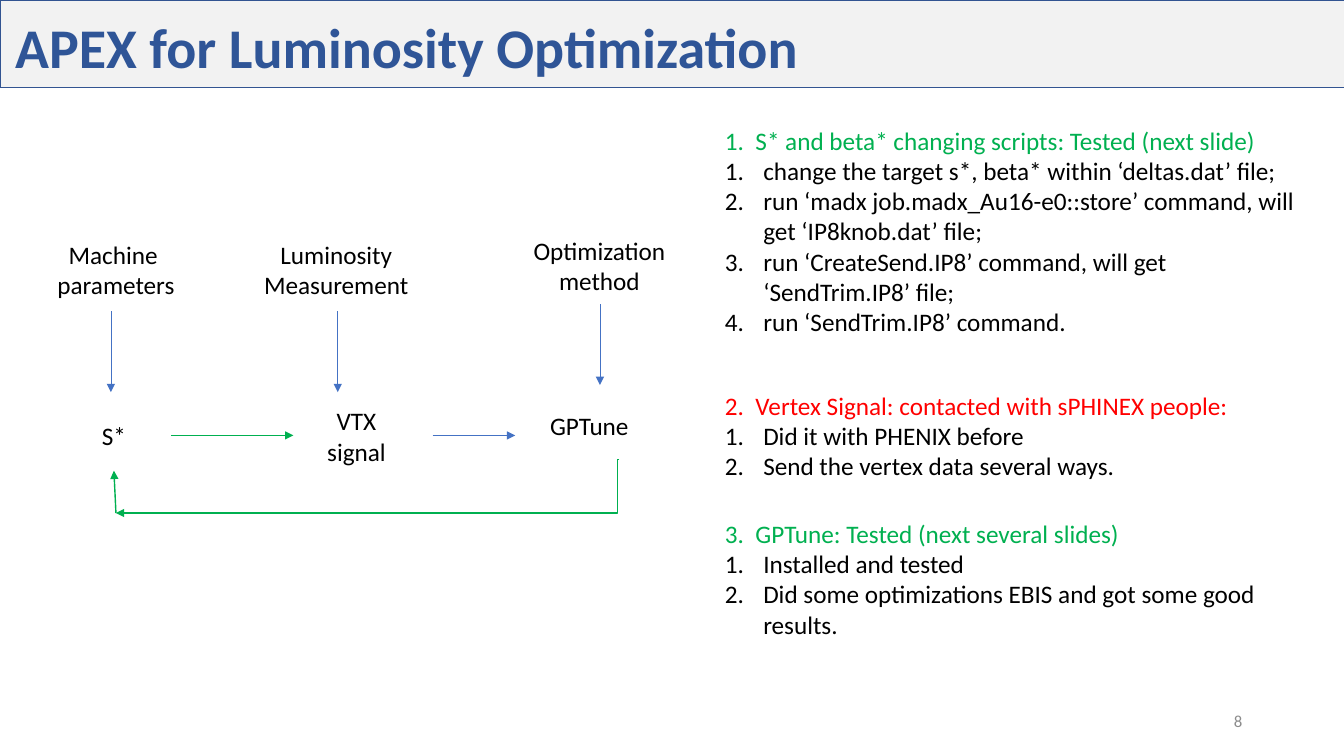
from dataclasses import dataclass

from pptx import Presentation
from pptx.dml.color import RGBColor
from pptx.enum import shapes, text
from pptx.oxml import ns, xmlchemy
from pptx.util import Inches, Pt

FONT = "Calibri"
BLACK, GREEN, RED, BLUE = "000000", "00B050", "FF0000", "4472C4"
NAVY, GRAY = "2F5597", "8C8C8C"
LEFT, MID, RIGHT = text.PP_ALIGN.LEFT, text.PP_ALIGN.CENTER, text.PP_ALIGN.RIGHT


@dataclass
class Label:
    words: str
    box: tuple
    wrap: bool = True
    size: int = 18
    color: str = BLACK
    align: text.PP_ALIGN = MID


@dataclass
class Arrow:
    start: tuple
    end: tuple
    color: str = BLUE
    width: float = 0.5
    bend: int = 0


@dataclass
class Topic:
    slot: int
    box: tuple
    head: str
    color: str
    steps: list


LABELS = [
    Label("8", (9.42, 6.95, 3, 0.4), size=12, color=GRAY, align=RIGHT),
    Label("Optimization method", (5.15, 2.28, 1.59, 0.71)),
    Label("VTX\nsignal", (2.74, 3.97, 1.59, 0.71)),
    Label("Machine \nparameters", (0.46, 2.32, 1.38, 0.71), wrap=False),
    Label("S*", (0.91, 4.12, 0.44, 0.4), wrap=False),
    Label("GPTune", (5.11, 4.02, 1.47, 0.4)),
    Label("Luminosity Measurement", (2.51, 2.32, 1.65, 0.71)),
]
ARROWS = [
    Arrow((1.7, 4.32), (2.91, 4.32), GREEN),
    Arrow((4.29, 4.32), (5.11, 4.32)),
    Arrow((6.14, 4.56), (1.15, 5.09), GREEN, 1, bend=300),
    Arrow((1.15, 5.09), (1.13, 4.67), GREEN, 1),
    Arrow((1.1, 3.09), (1.1, 3.89)),
    Arrow((5.95, 3.02), (5.95, 3.82)),
    Arrow((3.35, 3.09), (3.35, 3.89)),
]
TOPICS = [
    Topic(1, (7.09, 1.19, 5.87, 2.22),
          "1.  S* and beta* changing scripts: Tested (next slide)", GREEN,
          ["change the target s*, beta* within ‘deltas.dat’ file;",
           "run ‘madx job.madx_Au16-e0::store’ command, will get ‘IP8knob.dat’ file;",
           "run ‘CreateSend.IP8’ command, will get ‘SendTrim.IP8’ file;",
           "run ‘SendTrim.IP8’ command."]),
    Topic(2, (7.09, 3.82, 5.63, 1.01),
          "2.  Vertex Signal: contacted with sPHINEX people:", RED,
          ["Did it with PHENIX before", "Send the vertex data several ways."]),
    Topic(3, (7.09, 5.09, 5.55, 1.31),
          "3.  GPTune: Tested (next several slides)", GREEN,
          ["Installed and tested",
           "Did some optimizations EBIS and got some good results."]),
]


def paint(target, color: str) -> None:
    target.rgb = RGBColor.from_string(color)


def style(par, size: int, color: str, bold: bool = False, align=LEFT) -> None:
    par.alignment = align
    par.line_spacing = 1.0
    par.space_before = par.space_after = Pt(0)
    par.font.name, par.font.size, par.font.bold = FONT, Pt(size), bold
    paint(par.font.color, color)


def place(shape, box: tuple) -> None:
    shape.left, shape.top, shape.width, shape.height = map(Inches, box)


def add(parent, tag: str, **attrs: str):
    """Append one child element with the given attributes."""
    child = xmlchemy.OxmlElement(tag)
    for key, value in attrs.items():
        child.set(key, value)
    parent.append(child)
    return child


def mark(par, step: bool) -> None:
    """Number a step, or clear the bullet of a heading."""
    props = par._p.get_or_add_pPr()
    hang = Inches(0.38) if step else 0
    props.set("marL", str(hang))
    props.set("indent", str(-hang))
    if step:
        add(props, "a:buFont", typeface="+mj-lt")
        add(props, "a:buAutoNum", type="arabicPeriod")
    else:
        add(props, "a:buNone")


def draw_label(slide, label: Label) -> None:
    shape = slide.shapes.add_textbox(*map(Inches, label.box))
    frame = shape.text_frame
    frame.word_wrap = label.wrap
    frame.vertical_anchor = text.MSO_ANCHOR.MIDDLE
    frame.text = label.words
    for par in frame.paragraphs:
        style(par, label.size, label.color, align=label.align)


def draw_arrow(slide, arrow: Arrow) -> None:
    kinds = shapes.MSO_CONNECTOR
    kind = kinds.ELBOW if arrow.bend else kinds.STRAIGHT
    line = slide.shapes.add_connector(kind, *map(Inches, arrow.start + arrow.end))
    line.line.width = Pt(arrow.width)
    paint(line.line.color, arrow.color)
    props = line._element.spPr
    add(props.find(ns.qn("a:ln")), "a:tailEnd", type="triangle")
    add(props, "a:effectLst")
    if arrow.bend:
        guides = props.find(ns.qn("a:prstGeom")).get_or_add_avLst()
        add(guides, "a:gd", name="adj1", fmla=f"val {arrow.bend}")


def draw_topic(slide, topic: Topic) -> None:
    body = slide.placeholders[topic.slot]
    place(body, topic.box)
    frame = body.text_frame
    frame.text = "\n".join([topic.head, *topic.steps])
    frame.word_wrap = True
    frame.auto_size = text.MSO_AUTO_SIZE.NONE
    frame.vertical_anchor = text.MSO_ANCHOR.TOP
    for i, par in enumerate(frame.paragraphs):
        mark(par, i > 0)
        style(par, 18, BLACK if i else topic.color)


def draw_title(slide) -> None:
    band = slide.shapes.add_shape(
        shapes.MSO_SHAPE.RECTANGLE, 0, 0, Inches(13.34), Inches(0.87))
    band.shadow.inherit = False
    band.fill.solid()
    paint(band.fill.fore_color, "F2F2F2")
    paint(band.line.color, "325491")
    band.line.width = Pt(1)
    title = slide.shapes.title
    title._element.addprevious(band._element)
    place(title, (0.05, 0.07, 13.13, 0.77))
    title.text_frame.text = "APEX for Luminosity Optimization"
    title.text_frame.auto_size = text.MSO_AUTO_SIZE.NONE
    title.text_frame.vertical_anchor = text.MSO_ANCHOR.TOP
    style(title.text_frame.paragraphs[0], 40, NAVY, bold=True)


def main() -> None:
    deck = Presentation()
    deck.slide_width, deck.slide_height = Inches(13.33), Inches(7.5)
    slide = deck.slides.add_slide(deck.slide_layouts.get_by_name("Comparison"))
    draw_title(slide)
    for label in LABELS:
        draw_label(slide, label)
    for arrow in ARROWS:
        draw_arrow(slide, arrow)
    for topic in TOPICS:
        draw_topic(slide, topic)
    spare = slide.placeholders[4]._element
    spare.getparent().remove(spare)
    deck.save("out.pptx")


if __name__ == "__main__":
    main()
